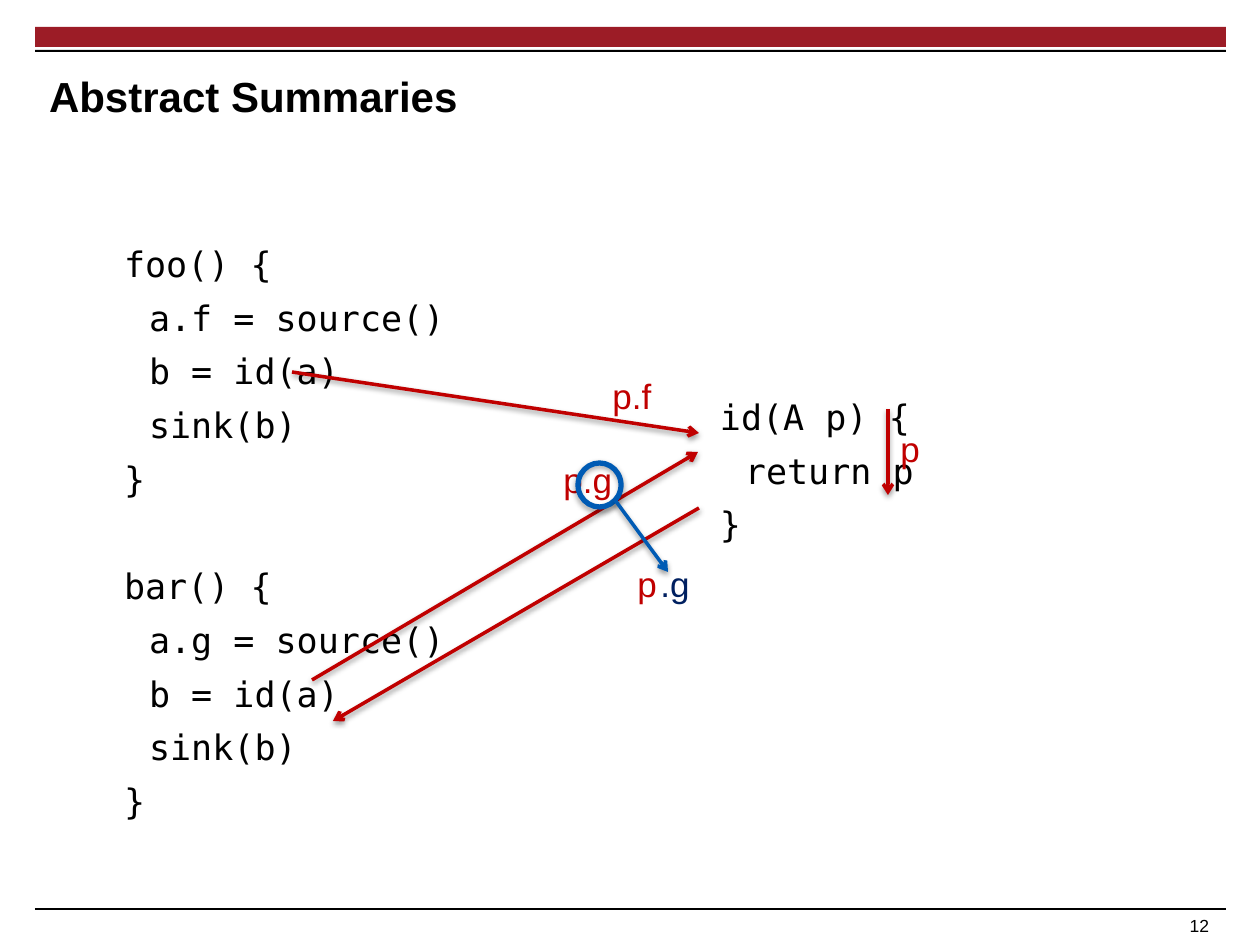
from lxml.etree import SubElement
from pptx import Presentation
from pptx.dml.color import RGBColor
from pptx.enum.shapes import MSO_CONNECTOR, MSO_SHAPE
from pptx.enum.text import MSO_ANCHOR, MSO_AUTO_SIZE, PP_ALIGN
from pptx.oxml.ns import qn
from pptx.util import Emu, Pt

BLACK, BAND, RED, BLUE, NAVY = "000000", "9C1C26", "C00000", "005BB4", "002060"
INDENT = 25


def px(length):
    """Turn pixels, 126 to the inch, into EMU."""
    return Emu(round(length * 914400 / 126))


def colour(value):
    """Return the colour for a hex string."""
    return RGBColor.from_string(value)


def add_shadow(shape, distance, alpha):
    """Give a shape or connector a soft shadow falling straight down."""
    effects = SubElement(shape._element.spPr, qn("a:effectLst"))
    shadow = SubElement(effects, qn("a:outerShdw"), blurRad="40000", dist=str(distance),
                        dir="5400000", rotWithShape="0")
    black = SubElement(shadow, qn("a:srgbClr"), val=BLACK)
    SubElement(black, qn("a:alpha"), val=str(alpha * 1000))


def add_line(page, start, end, hue, width):
    """Draw a straight connector between two points."""
    line = page.shapes.add_connector(MSO_CONNECTOR.STRAIGHT, *map(px, start + end))
    line.line.color.rgb = colour(hue)
    line.line.width = Pt(width)
    return line


def add_arrow(page, start, end, hue):
    """Draw a shadowed arrow between two points."""
    arrow = add_line(page, start, end, hue, 2)
    SubElement(arrow.line._get_or_add_ln(), qn("a:tailEnd"), type="arrow")
    add_shadow(arrow, 20000, 38)


def add_text(page, box, lines, hue=BLACK, size=20, font="Arial", bold=False):
    """Place lines of text in a box, one paragraph each."""
    text_box = page.shapes.add_textbox(*map(px, box))
    frame = text_box.text_frame
    frame.word_wrap = True
    frame.text = "\n".join(lines)
    for para in frame.paragraphs:
        for span in para.runs:
            span.font.name = font
            span.font.size = Pt(size)
            span.font.bold = bold
            span.font.color.rgb = colour(hue)
    return frame


def add_frame(page, box):
    """Draw the bars at the top and the rule and page number at the bottom."""
    left, top, width, height = box
    for offset, thickness, hue in ((0, 20, BAND), (23, 2, BLACK)):
        bar = page.shapes.add_shape(MSO_SHAPE.RECTANGLE,
                                    *map(px, (left, top + offset, width, thickness)))
        bar.shadow.inherit = False
        bar.fill.solid()
        bar.fill.fore_color.rgb = colour(hue)
        bar.line.fill.background()
    right, bottom = left + width, top + height
    rule = add_line(page, (left, bottom), (right, bottom), BLACK, 0.6)
    SubElement(rule._element.spPr, qn("a:effectLst"))
    number = add_text(page, (right - 993, bottom, 993, 32), ["12"], size=10)
    number.margin_right = px(17)
    number.paragraphs[0].alignment = PP_ALIGN.RIGHT


def add_title(page, box, title):
    """Place the slide title, centred vertically in its box."""
    frame = add_text(page, box, [title], size=24, bold=True)
    frame.vertical_anchor = MSO_ANCHOR.MIDDLE
    frame.margin_left = frame.margin_right = frame.margin_top = frame.margin_bottom = 0


def add_code(page, box, functions):
    """List functions, each a header with an indented body, a line apart."""
    lines, levels, starts = [], [], []
    for header, *body in functions:
        starts.append(len(lines))
        lines += [header, *body, "}"]
        levels += [0] + [1] * len(body) + [0]
    frame = add_text(page, box, lines, font="DejaVu Sans Mono")
    frame.margin_left = frame.margin_right = 0
    for index, (para, level) in enumerate(zip(frame.paragraphs, levels)):
        para.line_spacing = 1.1
        para.space_before = Pt(32.7 if index in starts[1:] else 2)
        para.space_after = Pt(2.3)
        para._p.get_or_add_pPr().set("marL", str(px(INDENT * level)))


def add_label(page, box, text, hue=RED):
    """Place a short label that fits its text."""
    frame = add_text(page, box, [text], hue)
    frame.word_wrap = False
    frame.auto_size = MSO_AUTO_SIZE.SHAPE_TO_FIT_TEXT


def add_flow(page, box):
    """Draw the data flow between the functions, with its labels."""
    left, top = box[:2]

    def at(x, y):
        """Return a point relative to the box."""
        return left + x, top + y

    arrows = (((0, 4), (407, 65)), ((20, 312), (406, 84)),
              ((596, 41), (596, 127)), ((407, 140), (41, 353)))
    for start, end in arrows:
        add_arrow(page, at(*start), at(*end), RED)
    labels = (("p.f", 308, 0, 68), ("p.g", 259, 84, 74),
              ("p", 596, 53, 45), ("p", 333, 188, 45))
    for text, x, y, width in labels:
        add_label(page, (*at(x, y), width, 55), text)
    ring = page.shapes.add_shape(MSO_SHAPE.OVAL, *map(px, (*at(286, 95), 43, 44)))
    ring.fill.background()
    ring.line.color.rgb = colour(BLUE)
    ring.line.width = Pt(3)
    add_shadow(ring, 23000, 35)
    add_arrow(page, at(323, 132), at(376, 204), BLUE)
    add_label(page, (*at(356, 188), 55, 55), ".g", NAVY)


def main():
    """Build and save the slide."""
    deck = Presentation()
    deck.slide_width, deck.slide_height = px(1260), px(945)
    page = deck.slides.add_slide(deck.slide_layouts[6])
    add_frame(page, (35, 27, 1191, 882))
    add_title(page, (49, 56, 1176, 79), "Abstract Summaries")
    call = ["b = id(a)", "sink(b)"]
    add_code(page, (124, 232, 446, 697),
             [["foo() {", "a.f = source()", *call], ["bar() {", "a.g = source()", *call]])
    add_code(page, (720, 385, 277, 200), [["id(A p) {", "return p"]])
    add_flow(page, (292, 368, 641, 353))
    deck.save("out.pptx")


if __name__ == "__main__":
    main()
